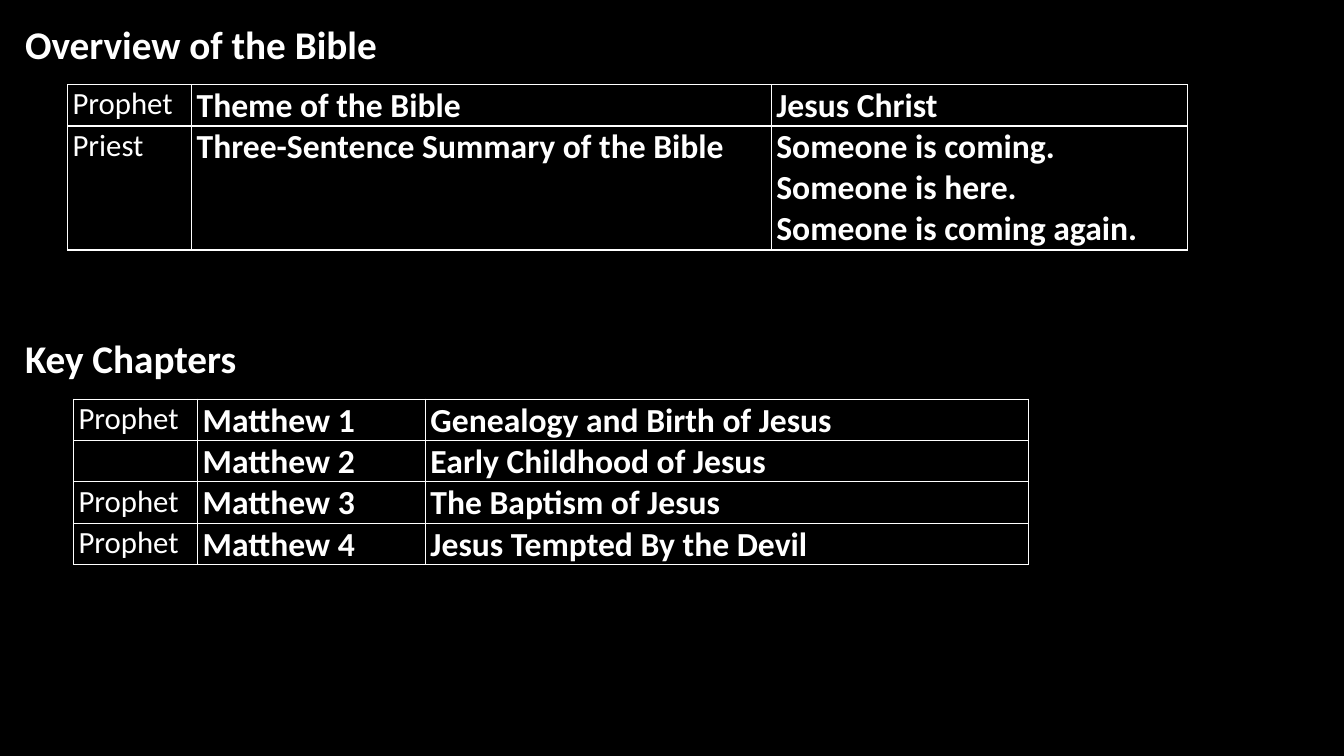
from lxml import etree
from pptx import Presentation
from pptx.dml.color import RGBColor
from pptx.enum.text import MSO_AUTO_SIZE
from pptx.oxml.ns import qn
from pptx.util import Inches, Pt

FIT_SHAPE = MSO_AUTO_SIZE.SHAPE_TO_FIT_TEXT
FONT = "Calibri"
BLACK = "000000"
WHITE = "FFFFFF"
ROW_HEIGHT = 0.41

OVERVIEW_ROWS = [
    ["Prophet", "Theme of the Bible", "Jesus Christ"],
    ["Priest", "Three-Sentence Summary of the Bible",
     "Someone is coming.\nSomeone is here.\nSomeone is coming again."],
]
CHAPTER_ROWS = [
    ["Prophet", "Matthew 1", "Genealogy and Birth of Jesus"],
    ["", "Matthew 2", "Early Childhood of Jesus"],
    ["Prophet", "Matthew 3", "The Baptism of Jesus"],
    ["Prophet", "Matthew 4", "Jesus Tempted By the Devil"],
]


def color(value):
    return RGBColor.from_string(value)


def format_text(text_frame, size, bold):
    for para in text_frame.paragraphs:
        for span in para.runs:
            span.font.name = FONT
            span.font.size = Pt(size)
            span.font.bold = bold
            span.font.color.rgb = color(WHITE)


def add_heading(page, text, left, top, width, height):
    box = page.shapes.add_textbox(Inches(left), Inches(top), Inches(width), Inches(height))
    frame = box.text_frame
    frame.word_wrap = True
    frame.auto_size = FIT_SHAPE
    frame.text = text
    format_text(frame, 28, True)


def add_borders(cell):
    properties = cell._tc.get_or_add_tcPr()
    for side in ("lnL", "lnR", "lnT", "lnB"):
        line = etree.SubElement(properties, qn(f"a:{side}"), w=str(Pt(1)))
        fill = etree.SubElement(line, qn("a:solidFill"))
        etree.SubElement(fill, qn("a:srgbClr"), val=WHITE)


def fill_cell(cell, text, size, bold):
    cell.margin_left = Inches(0.05)
    cell.margin_top = cell.margin_right = Inches(0.01)
    cell.margin_bottom = 0
    cell.text = text
    format_text(cell.text_frame, size, bold)
    add_borders(cell)
    cell.fill.background()


def add_grid(page, rows, left, top, widths):
    """Add a bordered table whose rows grow with their number of text lines."""
    heights = [ROW_HEIGHT * max(text.count("\n") + 1 for text in row) for row in rows]
    frame = page.shapes.add_table(len(rows), len(widths), Inches(left), Inches(top),
                                  Inches(sum(widths)), Inches(sum(heights)))
    table = frame.table
    table.first_row = False
    table.horz_banding = False
    for column, width in zip(table.columns, widths):
        column.width = Inches(width)
    for table_row, height, texts in zip(table.rows, heights, rows):
        table_row.height = Inches(height)
        for index, (cell, text) in enumerate(zip(table_row.cells, texts)):
            is_label = index == 0
            fill_cell(cell, text, 22 if is_label else 24, not is_label)


def main():
    deck = Presentation()
    deck.slide_width = Inches(13.33)
    deck.slide_height = Inches(7.5)
    page = deck.slides.add_slide(deck.slide_layouts[6])
    page.background.fill.solid()
    page.background.fill.fore_color.rgb = color(BLACK)

    add_heading(page, "Overview of the Bible", 0.15, 0.15, 6.71, 0.57)
    add_grid(page, OVERVIEW_ROWS, 0.67, 0.84, [1.23, 5.75, 4.13])
    add_heading(page, "Key Chapters", 0.15, 3.27, 11.66, 0.57)
    add_grid(page, CHAPTER_ROWS, 0.73, 3.96, [1.23, 2.26, 5.98])

    deck.save("out.pptx")


if __name__ == "__main__":
    main()
